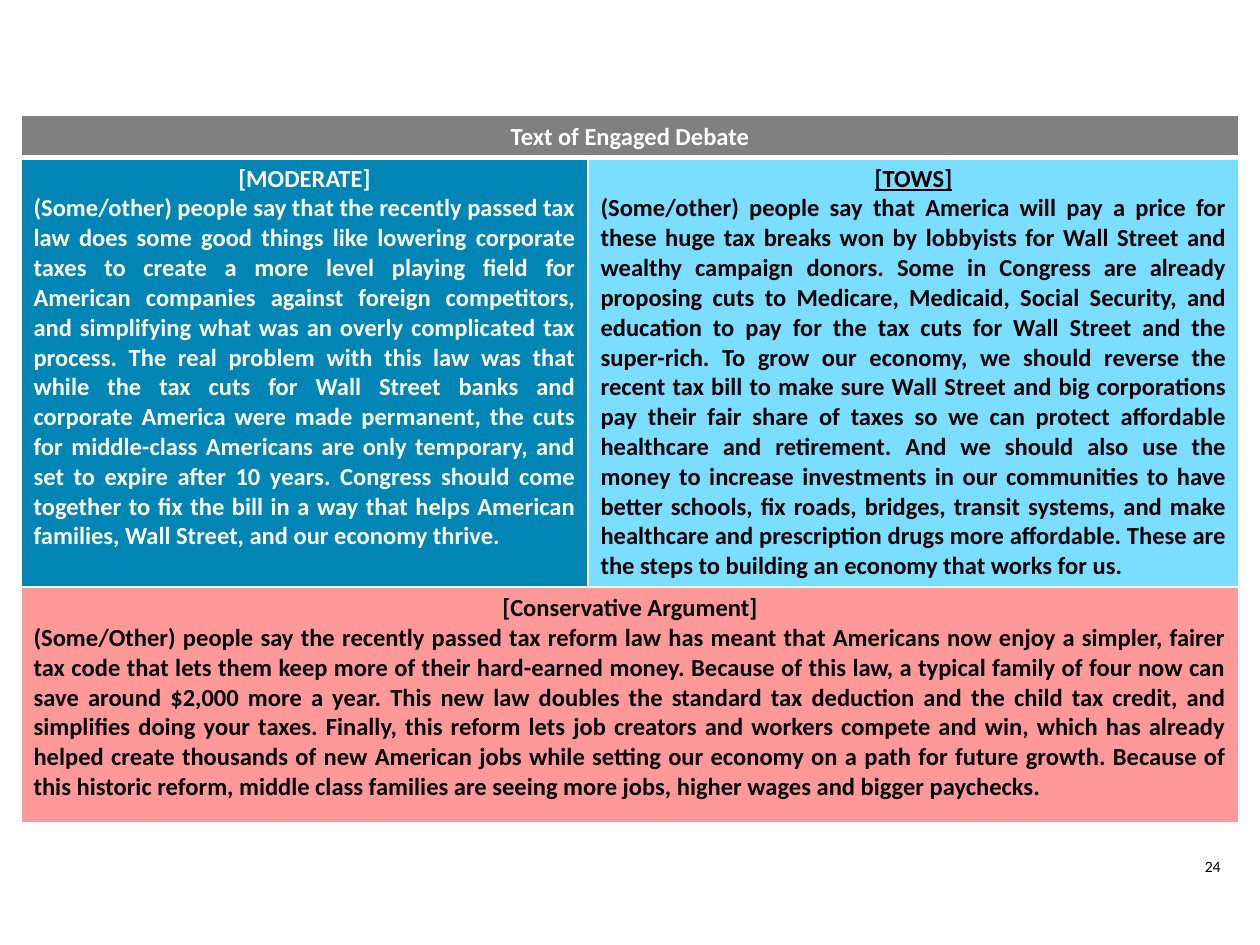
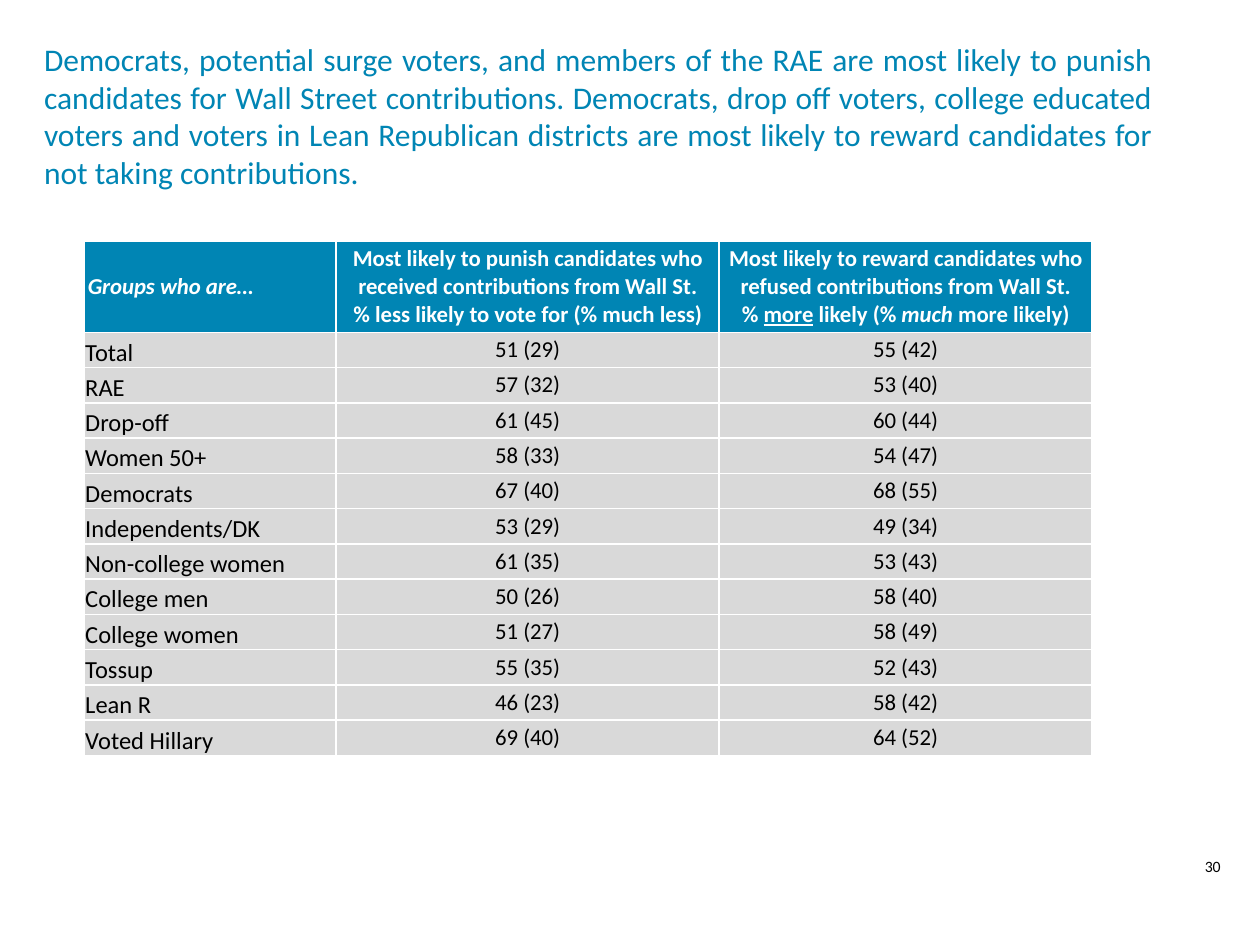
"""Build two slides on tax and campaign-money messaging: a debate text and a voter table."""
from dataclasses import dataclass
from typing import NamedTuple

from lxml.etree import SubElement
from pptx import Presentation
from pptx.dml.color import RGBColor
from pptx.enum.text import MSO_ANCHOR as Anchor, MSO_AUTO_SIZE as AutoSize, PP_ALIGN as Align
from pptx.oxml.ns import qn
from pptx.util import Emu, Inches, Pt

UNITS_PER_INCH = 12
LAYOUT_TITLE_ONLY, LAYOUT_BLANK = 5, 6


@dataclass(frozen=True)
class Theme:
    """Hold the colours and type sizes that both slides share."""
    font: str = "Calibri"
    blue: str = "0085B4"
    sky: str = "7BDDFF"
    pink: str = "FF9999"
    grey: str = "808080"
    pale: str = "D9D9D9"
    white: str = "FFFFFF"
    black: str = "000000"
    title: float = 18
    body: float = 14
    figure: float = 13
    number: float = 9
    thin: float = 1
    thick: float = 3


THEME = Theme()


class Box(NamedTuple):
    """Place an object in grid units: column, row, width, height."""
    left: float
    top: float
    width: float
    height: float


class Insets(NamedTuple):
    """Give cell margins in inches."""
    left: float
    top: float
    right: float
    bottom: float


class Run(NamedTuple):
    """Describe one stretch of text and its emphasis."""
    text: str
    italic: bool = False
    underline: bool = False


class Para(NamedTuple):
    """Describe one paragraph as an alignment and its runs."""
    align: Align
    runs: tuple[Run, ...]


class Style(NamedTuple):
    """Describe the type of a whole text block."""
    size: float
    color: str
    bold: bool = False


class CellSpec(NamedTuple):
    """Describe the content and look of one table cell."""
    paras: tuple[Para, ...]
    style: Style
    fill: str
    anchor: Anchor = Anchor.TOP
    insets: Insets = Insets(0.1, 0.05, 0.1, 0.05)


FIGURE_INSETS = Insets(0.03, 0.03, 0.03, 0.03)
GROUP_INSETS = Insets(0.01, 0.01, 0.01, 0)
NUMBER_BOX = Box(111, 81, 9, 4)
TITLE_BOX = Box(3, 4, 108, 14)

MODERATE = (
    "(Some/other) people say that the recently passed tax law does some good things like "
    "lowering corporate taxes to create a more level playing field for American companies "
    "against foreign competitors, and simplifying what was an overly complicated tax process. "
    "The real problem with this law was that while the tax cuts for Wall Street banks and "
    "corporate America were made permanent, the cuts for middle-class Americans are only "
    "temporary, and set to expire after 10 years. Congress should come together to fix the "
    "bill in a way that helps American families, Wall Street, and our economy thrive."
)
TOWS = (
    "(Some/other) people say that America will pay a price for these huge tax breaks won by "
    "lobbyists for Wall Street and wealthy campaign donors. Some in Congress are already "
    "proposing cuts to Medicare, Medicaid, Social Security, and education to pay for the tax "
    "cuts for Wall Street and the super-rich. To grow our economy, we should reverse the recent "
    "tax bill to make sure Wall Street and big corporations pay their fair share of taxes so we "
    "can protect affordable healthcare and retirement. And we should also use the money to "
    "increase investments in our communities to have better schools, fix roads, bridges, transit "
    "systems, and make healthcare and prescription drugs more affordable. These are the steps to "
    "building an economy that works for us."
)
CONSERVATIVE = (
    "(Some/Other) people say the recently passed tax reform law has meant that Americans now "
    "enjoy a simpler, fairer tax code that lets them keep more of their hard-earned money. "
    "Because of this law, a typical family of four now can save around $2,000 more a year. This "
    "new law doubles the standard tax deduction and the child tax credit, and simplifies doing "
    "your taxes. Finally, this reform lets job creators and workers compete and win, which has "
    "already helped create thousands of new American jobs while setting our economy on a path "
    "for future growth. Because of this historic reform, middle class families are seeing more "
    "jobs, higher wages and bigger paychecks."
)
VOTER_TITLE = (
    "Democrats, potential surge voters, and members of the RAE are most likely to punish "
    "candidates for Wall Street contributions. Democrats, drop off voters, college educated "
    "voters and voters in Lean Republican districts are most likely to reward candidates for "
    "not taking contributions."
)
VOTER_GROUPS = (
    ("Total", "51 (29)", "55 (42)"),
    ("RAE", "57 (32)", "53 (40)"),
    ("Drop-off", "61 (45)", "60 (44)"),
    ("Women 50+", "58 (33)", "54 (47)"),
    ("Democrats", "67 (40)", "68 (55)"),
    ("Independents/DK", "53 (29)", "49 (34)"),
    ("Non-college women", "61 (35)", "53 (43)"),
    ("College men", "50 (26)", "58 (40)"),
    ("College women", "51 (27)", "58 (49)"),
    ("Tossup", "55 (35)", "52 (43)"),
    ("Lean R", "46 (23)", "58 (42)"),
    ("Voted Hillary", "69 (40)", "64 (52)"),
)


def grid(units: float) -> Emu:
    """Convert grid units to a length."""
    return Inches(units / UNITS_PER_INCH)


def line(align: Align, text: str, italic: bool = False, underline: bool = False) -> Para:
    """Make a paragraph of a single run."""
    return Para(align, (Run(text, italic, underline),))


def write(tf, paras: tuple[Para, ...], style: Style) -> None:
    """Fill a text frame run by run."""
    for i, para in enumerate(paras):
        p = tf.paragraphs[0] if i == 0 else tf.add_paragraph()
        p.alignment = para.align
        for run in para.runs:
            r = p.add_run()
            r.text = run.text
            font = r.font
            font.name, font.size, font.bold = THEME.font, Pt(style.size), style.bold
            font.italic, font.underline = run.italic, run.underline
            font.color.rgb = RGBColor.from_string(style.color)


def add_borders(cell, top: float, bottom: float) -> None:
    """Draw white lines round a cell."""
    tcPr = cell._tc.get_or_add_tcPr()
    widths = {"a:lnL": THEME.thin, "a:lnR": THEME.thin, "a:lnT": top, "a:lnB": bottom}
    for tag, width in widths.items():
        ln = SubElement(tcPr, qn(tag), w=str(Pt(width)))
        SubElement(SubElement(ln, qn("a:solidFill")), qn("a:srgbClr"), val=THEME.white)


def add_grid_table(slide, left: float, top: float, cols: tuple[float, ...],
                   rows: tuple[float, ...], cells: list[list[CellSpec]],
                   header_rule: float) -> None:
    """Add a table; a row with one cell spans every column."""
    box = Box(left, top, sum(cols), sum(rows))
    table = slide.shapes.add_table(len(rows), len(cols), *map(grid, box)).table
    table.first_row = table.horz_banding = False
    for column, width in zip(table.columns, cols):
        column.width = grid(width)
    for i, (row, height) in enumerate(zip(table.rows, rows)):
        row.height = grid(height)
        specs = cells[i]
        if len(specs) == 1:
            table.cell(i, 0).merge(table.cell(i, len(cols) - 1))
        for j, cell in enumerate(row.cells):
            spec = specs[min(j, len(specs) - 1)]
            add_borders(cell, header_rule if i == 1 else THEME.thin,
                        header_rule if i == 0 else THEME.thin)
            cell.fill.solid()
            cell.fill.fore_color.rgb = RGBColor.from_string(spec.fill)
            if cell.is_spanned:
                continue
            cell.vertical_anchor = spec.anchor
            (cell.margin_left, cell.margin_top,
             cell.margin_right, cell.margin_bottom) = map(Inches, spec.insets)
            write(cell.text_frame, spec.paras, spec.style)


def add_number(slide, number: int) -> None:
    """Add the slide number at the lower right."""
    tf = slide.shapes.add_textbox(*map(grid, NUMBER_BOX)).text_frame
    tf.word_wrap = True
    write(tf, (line(Align.CENTER, str(number)),), Style(THEME.number, THEME.black))


def set_title(slide, text: str) -> None:
    """Place and format the title placeholder."""
    sp = slide.shapes.title
    sp.left, sp.top, sp.width, sp.height = map(grid, TITLE_BOX)
    tf = sp.text_frame
    tf.word_wrap, tf.auto_size, tf.vertical_anchor = True, AutoSize.NONE, Anchor.MIDDLE
    write(tf, (line(Align.JUSTIFY, text),), Style(THEME.title, THEME.blue))


def argument(name: str, text: str, color: str, fill: str, underline: bool = False) -> CellSpec:
    """Make a cell with a centred label over a justified argument."""
    paras = (line(Align.CENTER, name, underline=underline), line(Align.JUSTIFY, text))
    return CellSpec(paras, Style(THEME.body, color, True), fill)


def build_debate(prs) -> None:
    """Build the slide with the three arguments."""
    slide = prs.slides.add_slide(prs.slide_layouts[LAYOUT_BLANK])
    add_number(slide, 24)
    header = CellSpec((line(Align.CENTER, "Text of Engaged Debate"),),
                      Style(THEME.body, THEME.white, True), THEME.grey, Anchor.MIDDLE)
    cells = [
        [header],
        [argument("[MODERATE]", MODERATE, THEME.white, THEME.blue),
         argument("[TOWS]", TOWS, THEME.black, THEME.sky, underline=True)],
        [argument("[Conservative Argument]", CONSERVATIVE, THEME.black, THEME.pink)],
    ]
    add_grid_table(slide, 2, 11, (54, 62), (4, 40.9, 22.5), cells, THEME.thick)


def voter_header(*paras: Para) -> CellSpec:
    """Make a header cell of the voter table."""
    return CellSpec(paras, Style(THEME.figure, THEME.white, True), THEME.blue,
                    Anchor.MIDDLE, FIGURE_INSETS)


def voter_row(group: str, *figures: str) -> list[CellSpec]:
    """Make a group name cell followed by its figures."""
    name = CellSpec((line(Align.LEFT, group),), Style(THEME.body, THEME.black),
                    THEME.pale, Anchor.BOTTOM, GROUP_INSETS)
    return [name] + [
        CellSpec((line(Align.CENTER, figure),), Style(THEME.figure, THEME.black),
                 THEME.pale, Anchor.MIDDLE, FIGURE_INSETS)
        for figure in figures
    ]


def build_voters(prs) -> None:
    """Build the slide with the table of voter groups."""
    slide = prs.slides.add_slide(prs.slide_layouts[LAYOUT_TITLE_ONLY])
    set_title(slide, VOTER_TITLE)
    add_number(slide, 30)
    more_likely = Para(Align.CENTER, (
        Run("% "), Run("more", underline=True), Run(" likely (% "),
        Run("much ", italic=True), Run("more likely)"),
    ))
    headers = [
        voter_header(line(Align.LEFT, "Groups who are…", italic=True)),
        voter_header(
            line(Align.CENTER, "Most likely to punish candidates who received contributions from Wall St."),
            line(Align.CENTER, "% less likely to vote for (% much less)")),
        voter_header(
            line(Align.CENTER, "Most likely to reward candidates who refused contributions from Wall St."),
            more_likely),
    ]
    cells = [headers] + [voter_row(*group) for group in VOTER_GROUPS]
    rows = (8.65,) + (3.36,) * len(VOTER_GROUPS)
    add_grid_table(slide, 8, 23, (24, 36.5, 35.5), rows, cells, THEME.thin)


def main() -> None:
    """Build and save the presentation."""
    prs = Presentation()
    prs.slide_width, prs.slide_height = Inches(10), Inches(7.5)
    build_debate(prs)
    build_voters(prs)
    prs.save("out.pptx")


if __name__ == "__main__":
    main()
